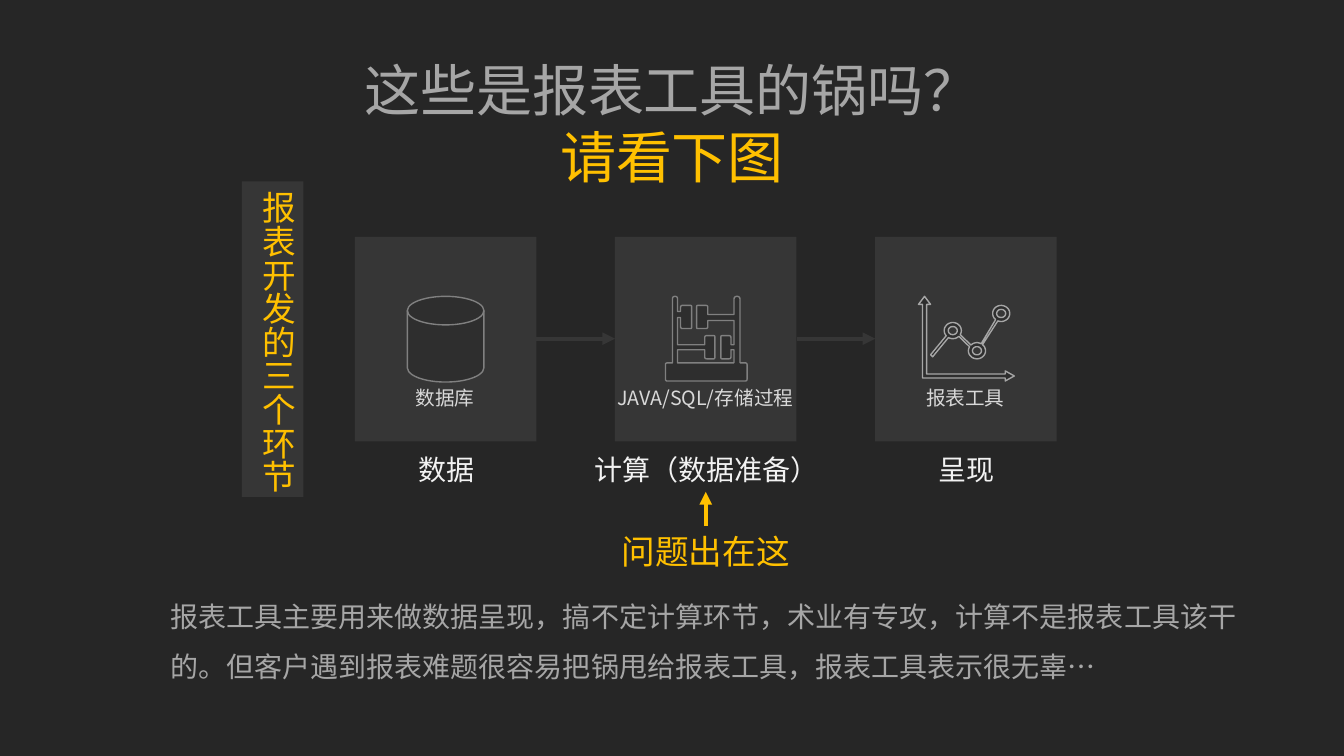
from math import cos, dist, radians, sin

from lxml.etree import SubElement
from pptx import Presentation
from pptx.dml.color import RGBColor
from pptx.enum.shapes import MSO_CONNECTOR, MSO_SHAPE
from pptx.enum.text import MSO_ANCHOR, MSO_AUTO_SIZE, PP_ALIGN
from pptx.oxml.ns import qn
from pptx.util import Inches, Pt

FONT = "Noto Sans CJK SC"
BACKGROUND, PANEL, ICON = "262626", "363636", "2E2E2E"
GOLD, GREY, DARK_GREY = "FFC000", "A6A6A6", "808080"
LABEL, CAPTION = "D9D9D9", "F2F2F2"

TITLE = [("这些是报表工具的锅吗？", GREY), ("请看下图", GOLD)]
SIDE_HEADING = "报表开发的三个环节"
STEPS = [("数据库", "数据"), ("JAVA/SQL/存储过程", "计算（数据准备）"), ("报表工具", "呈现")]
PROBLEM = "问题出在这"
EXPLANATION = ("报表工具主要用来做数据呈现，搞不定计算环节，术业有专攻，计算不是报表工具该干的。"
               "但客户遇到报表难题很容易把锅甩给报表工具，报表工具表示很无辜…")

PANEL_WIDTH, PANEL_HEIGHT, PANEL_TOP = 1.8, 2.03, 2.35
FIRST_CENTER, STEP_PITCH = 4.42, 2.58
ARROW_Y = 3.36
DOTS = [(9.45, 3.28), (9.69, 3.48), (9.93, 3.11)]


def color(value):
    return RGBColor.from_string(value)


def write(shape, lines, size, align=PP_ALIGN.CENTER, wrap=False, spacing=None):
    """Fill a shape with (text, colour) paragraphs."""
    frame = shape.text_frame
    frame_format = {"word_wrap": wrap, "auto_size": MSO_AUTO_SIZE.NONE,
                    "vertical_anchor": MSO_ANCHOR.TOP}
    for name, value in frame_format.items():
        setattr(frame, name, value)
    for index, (text, text_color) in enumerate(lines):
        paragraph = frame.add_paragraph() if index else frame.paragraphs[0]
        for name, value in {"alignment": align, "line_spacing": spacing}.items():
            setattr(paragraph, name, value)
        run = paragraph.add_run()
        run.text = text
        for name, value in {"size": Pt(size), "name": FONT}.items():
            setattr(run.font, name, value)
        run.font.color.rgb = color(text_color)
        SubElement(run.font._element, qn("a:ea"), typeface=FONT)


def add_text(slide, box, text, size, text_color, **options):
    shape = slide.shapes.add_textbox(*map(Inches, box))
    write(shape, [(text, text_color)], size, **options)


def style(shape, fill, line=None):
    shape.shadow.inherit = False
    shape.fill.solid()
    shape.fill.fore_color.rgb = color(fill)
    if line:
        shape.line.color.rgb = color(line)
        shape.line.width = Pt(1)
    else:
        shape.line.fill.background()


def add_shape(slide, kind, box, fill, line=None):
    shape = slide.shapes.add_shape(kind, *map(Inches, box))
    style(shape, fill, line)
    return shape


def add_arrow(slide, start, end, line_color):
    connector = slide.shapes.add_connector(
        MSO_CONNECTOR.STRAIGHT, *map(Inches, (*start, *end)))
    connector.line.color.rgb = color(line_color)
    connector.line.width = Pt(3)
    SubElement(connector.line._get_or_add_ln(), qn("a:tailEnd"), type="triangle")
    SubElement(connector._element.spPr, qn("a:effectLst"))


def add_outline(slide, contours, line):
    """Draw closed contours, given in inches, as one freeform."""
    scaled = [[(x * 1000, y * 1000) for x, y in contour] for contour in contours]
    builder = slide.shapes.build_freeform(*scaled[0][0], scale=Inches(1) / 1000)
    for index, contour in enumerate(scaled):
        if index:
            builder.move_to(*contour[0])
        builder.add_line_segments(contour[1:], close=True)
    style(builder.convert_to_shape(), ICON, line)


def rounded(corners):
    """Replace each (x, y, radius) corner by a short curve."""
    points = []
    for index, (x, y, radius) in enumerate(corners):
        if not radius:
            points.append((x, y))
            continue
        ends = []
        for other in (corners[index - 1], corners[(index + 1) % len(corners)]):
            share = radius / dist((x, y), other[:2])
            ends.append((x + (other[0] - x) * share, y + (other[1] - y) * share))
        (x1, y1), (x2, y2) = ends
        for t in (0, 0.25, 0.5, 0.75, 1):
            a, b, c = (1 - t) ** 2, 2 * t * (1 - t), t ** 2
            points.append((a * x1 + b * x + c * x2, a * y1 + b * y + c * y2))
    return points


def bead(near, far, first, last, rod_first, rod_last):
    return [(near, rod_first, 0), (near, first, 0.02), (far, first, 0.01),
            (far, last, 0.01), (near, last, 0.02), (near, rod_last, 0)]


def arc(center, start, end, radius_x=0.085, radius_y=0.08):
    steps = 24
    angles = [radians(start + (end - start) * i / steps) for i in range(steps + 1)]
    return [(center[0] + radius_x * cos(a), center[1] + radius_y * sin(a)) for a in angles]


def add_abacus(slide):
    corners = [
        (7.34, 3.6, 0), (7.34, 2.94, 0.03), (7.28, 2.94, 0.03), (7.28, 3.12, 0),
        *bead(7.02, 6.91, 3.03, 3.26, 3.12, 3.18),
        (7.28, 3.18, 0), (7.28, 3.42, 0),
        *bead(7.25, 7.15, 3.33, 3.56, 3.42, 3.47),
        (7.28, 3.47, 0), (7.28, 3.6, 0), (6.72, 3.6, 0), (6.72, 3.47, 0),
        *bead(6.99, 7.09, 3.56, 3.33, 3.47, 3.42),
        (6.72, 3.42, 0), (6.72, 3.15, 0),
        *bead(6.75, 6.86, 3.26, 3.03, 3.15, 3.09),
        (6.72, 3.09, 0), (6.72, 2.94, 0.025), (6.67, 2.94, 0.025), (6.67, 3.6, 0),
        (6.6, 3.6, 0.02), (6.6, 3.78, 0.02), (7.41, 3.78, 0.02), (7.41, 3.6, 0.02)]
    add_outline(slide, [rounded(corners)], DARK_GREY)


def add_line_chart_icon(slide):
    left, middle, right = DOTS
    holes = [arc(dot, 360, 0, 0.045, 0.04) for dot in DOTS]
    trend = [*arc(right, 130, 473), *arc(middle, -50, 210), *arc(left, 45, 120),
             (9.25, 3.54), (9.23, 3.52), *arc(left, 140, 390), *arc(middle, 225, 300)]
    axes = [(9.17, 2.94), (9.23, 3.02), (9.19, 3.02), (9.19, 3.71), (9.97, 3.71),
            (9.97, 3.68), (10.06, 3.73), (9.97, 3.78), (9.97, 3.75), (9.15, 3.75),
            (9.15, 3.02), (9.11, 3.02)]
    add_outline(slide, [*holes, trend, axes], GREY)


def add_steps(slide):
    half = PANEL_WIDTH / 2
    centers = [FIRST_CENTER + STEP_PITCH * i for i in range(len(STEPS))]
    for center in centers:
        add_shape(slide, MSO_SHAPE.RECTANGLE,
                  (center - half, PANEL_TOP, PANEL_WIDTH, PANEL_HEIGHT), PANEL)
    add_shape(slide, MSO_SHAPE.FLOWCHART_MAGNETIC_DISK,
              (centers[0] - 0.38, 2.94, 0.76, 0.85), ICON, DARK_GREY)
    add_abacus(slide)
    add_line_chart_icon(slide)
    for center, (label, caption) in zip(centers, STEPS):
        add_text(slide, (center - 1, 3.78, 1.99, 0.34), label, 14, LABEL, wrap=True)
        add_text(slide, (center - 1.22, 4.44, 2.45, 0.44), caption, 20, CAPTION)
    for start, end in zip(centers, centers[1:]):
        add_arrow(slide, (start + half, ARROW_Y), (end - half, ARROW_Y), PANEL)


def main():
    presentation = Presentation()
    presentation.slide_width, presentation.slide_height = Inches(13.33), Inches(7.5)
    slide = presentation.slides.add_slide(presentation.slide_layouts[5])
    slide.background.fill.solid()
    slide.background.fill.fore_color.rgb = color(BACKGROUND)

    title = slide.shapes.title
    for name, value in zip(("left", "top", "width", "height"), (3.48, 0.5, 6.37, 1.45)):
        setattr(title, name, Inches(value))
    write(title, TITLE, 40)

    add_steps(slide)

    heading = add_shape(slide, MSO_SHAPE.RECTANGLE, (2.4, 1.8, 0.61, 3.13), PANEL)
    write(heading, [(SIDE_HEADING, GOLD)], 24, align=PP_ALIGN.LEFT)
    heading.text_frame._txBody.bodyPr.set("vert", "eaVert")

    add_text(slide, (6.06, 5.22, 1.88, 0.5), PROBLEM, 24, GOLD)
    add_arrow(slide, (7, 5.22), (7, 4.88), GOLD)
    add_text(slide, (1.59, 5.73, 10.82, 1.05), EXPLANATION, 20, GREY,
             align=PP_ALIGN.LEFT, wrap=True, spacing=1.5)
    presentation.save("out.pptx")


if __name__ == "__main__":
    main()
